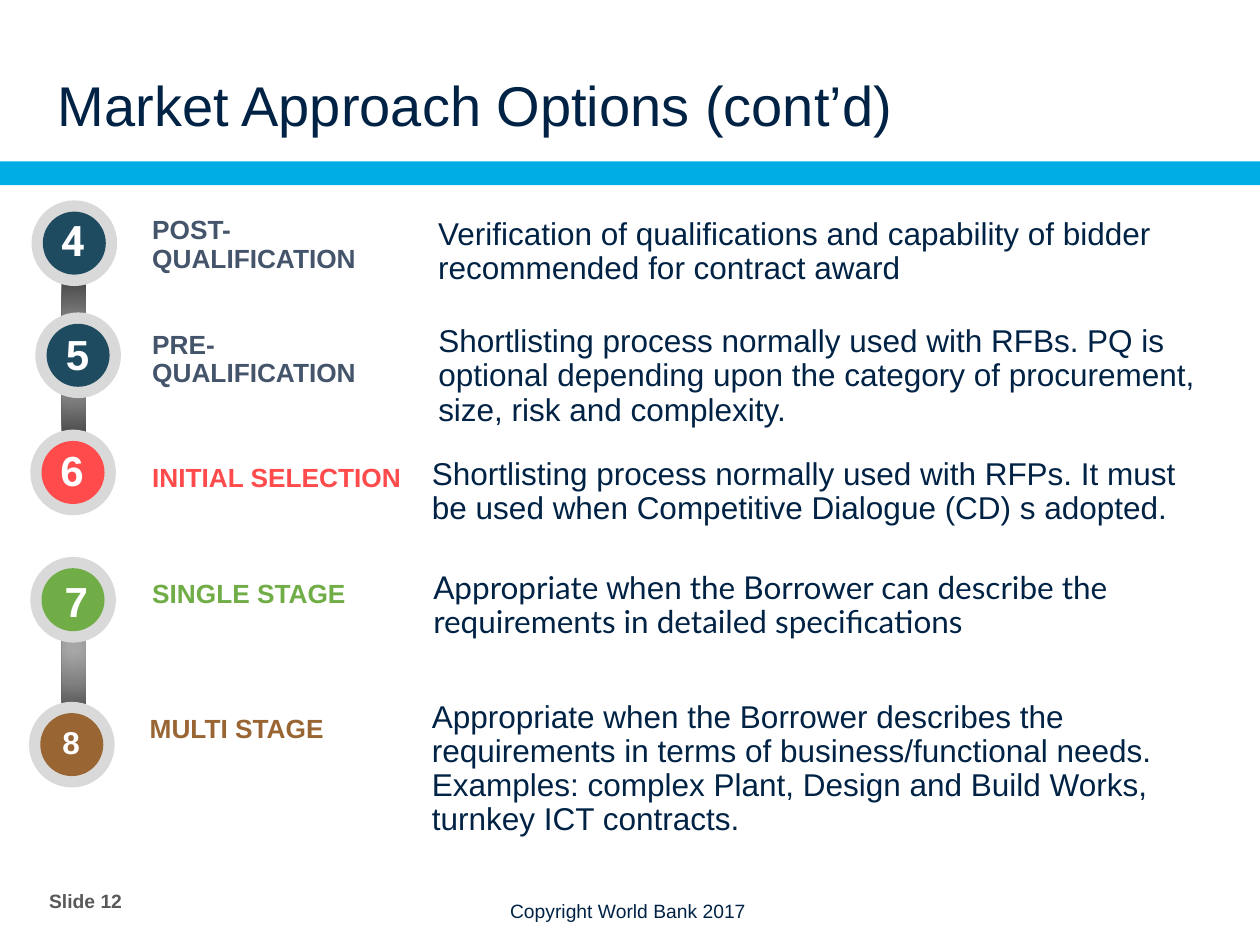
from dataclasses import dataclass

from pptx import Presentation
from pptx.dml.color import RGBColor
from pptx.enum.shapes import MSO_SHAPE as Shape
from pptx.enum.text import MSO_ANCHOR as Anchor, MSO_AUTO_SIZE as AutoSize, PP_ALIGN as Align
from pptx.oxml import parse_xml
from pptx.oxml.ns import nsdecls
from pptx.util import Inches, Pt


@dataclass(frozen=True)
class Theme:
    navy: str = "002345"
    band: str = "00ADE4"
    gray: str = "595959"
    ring: str = "D9D9D9"
    white: str = "FFFFFF"
    teal: str = "1F4B60"
    slate: str = "44546A"
    red: str = "FF4B4B"
    green: str = "70AD47"
    brown: str = "996633"
    bar_stops: tuple = ((7, "A6A6A6"), (48, "808080"), (100, "404040"))
    font: str = "Arial"
    title: int = 32
    number: int = 24
    body: int = 18
    label: int = 15
    footer: int = 11


THEME = Theme()


@dataclass
class Option:
    number: str
    badge: tuple
    number_box: tuple
    disc_color: str
    label: str
    label_box: tuple
    label_color: str
    description: tuple
    description_box: tuple
    number_size: int = THEME.number
    number_font: str = THEME.font


OPTIONS = [
    Option("4", (0.25, 1.59), (0.38, 1.7, 0.4, 0.46), THEME.teal,
           "POST-QUALIFICATION", (1.11, 1.67, 2.27, 0.56), THEME.slate,
           (("Verification of qualifications and capability of bidder "
             "recommended for contract award", THEME.font),),
           (3.38, 1.68, 6.27, 0.65), number_font="Roboto"),
    Option("5", (0.28, 2.48), (0.39, 2.6, 0.45, 0.46), THEME.teal,
           "PRE-QUALIFICATION", (1.11, 2.58, 2.27, 0.56), THEME.slate,
           (("Shortlisting process normally used with RFBs. PQ is optional depending "
             "upon the category of procurement, size, risk and complexity.", THEME.font),),
           (3.38, 2.53, 6.25, 0.92)),
    Option("6", (0.24, 3.41), (0.38, 3.52, 0.38, 0.46), THEME.red,
           "INITIAL SELECTION", (1.11, 3.64, 2.27, 0.33), THEME.red,
           (("Shortlisting process normally used with RFPs. It must be used when "
             "Competitive Dialogue (CD) s adopted.", THEME.font),),
           (3.33, 3.58, 6.19, 0.65)),
    Option("7", (0.24, 4.42), (0.39, 4.56, 0.43, 0.46), THEME.green,
           "SINGLE STAGE", (1.11, 4.56, 2.27, 0.33), THEME.green,
           (("Appropriate ", "Lato"), ("when", THEME.font),
            (" the Borrower can describe the requirements in detailed specifications", "Lato")),
           (3.34, 4.49, 6.48, 0.65)),
    Option("8", (0.23, 5.57), (0.26, 5.72, 0.61, 0.37), THEME.brown,
           "MULTI STAGE", (1.09, 5.63, 2.27, 0.33), THEME.brown,
           (("Appropriate when the Borrower describes the requirements in terms of "
             "business/functional needs. Examples: complex Plant, Design and Build Works, "
             "turnkey ICT contracts.", THEME.font),),
           (3.33, 5.51, 6.25, 1.19), number_size=THEME.body),
]


class SlideBuilder:
    def __init__(self, slide, theme):
        self.slide = slide
        self.theme = theme

    def shape(self, kind, box, color):
        shape = self.slide.shapes.add_shape(kind, *map(Inches, box))
        shape.shadow.inherit = False
        shape.line.fill.background()
        shape.fill.solid()
        shape.fill.fore_color.rgb = RGBColor.from_string(color)
        return shape

    def bar(self, box):
        """Draw a link between badges, shaded radially from its centre."""
        stops = self.theme.bar_stops
        bar = self.shape(Shape.RECTANGLE, box, stops[0][1])
        stop_xml = "".join(
            f'<a:gs pos="{percent * 1000}"><a:srgbClr val="{color}"/></a:gs>'
            for percent, color in stops)
        gradient = parse_xml(
            f'<a:gradFill {nsdecls("a")} rotWithShape="1"><a:gsLst>{stop_xml}</a:gsLst>'
            '<a:path path="circle"><a:fillToRect l="50000" t="50000" r="50000" b="50000"/>'
            '</a:path></a:gradFill>')
        properties = bar._element.spPr
        properties.replace(properties.find(gradient.tag.replace("gradFill", "solidFill")), gradient)

    def badge(self, left, top, color):
        ring, disc = 0.68, 0.5
        inset = (ring - disc) / 2
        self.shape(Shape.OVAL, (left, top, ring, ring), self.theme.ring)
        self.shape(Shape.OVAL, (left + inset, top + inset, disc, disc), color)

    def text(self, box, runs, size, color, bold=False, align=Align.LEFT, anchor=Anchor.MIDDLE,
             spacing=0.9, wrap=True, grow=True, padded=True):
        """Add one paragraph made of (text, font name) runs."""
        frame = self.slide.shapes.add_textbox(*map(Inches, box)).text_frame
        frame.word_wrap = wrap
        frame.auto_size = AutoSize.SHAPE_TO_FIT_TEXT if grow else AutoSize.NONE
        frame.vertical_anchor = anchor
        if not padded:
            frame.margin_left = frame.margin_top = frame.margin_right = frame.margin_bottom = 0
        paragraph = frame.paragraphs[0]
        paragraph.alignment = align
        paragraph.line_spacing = spacing
        for words, font_name in runs:
            run = paragraph.add_run()
            run.text = words
            run.font.name = font_name
            run.font.size = Pt(size)
            run.font.bold = bold
            run.font.color.rgb = RGBColor.from_string(color)

    def option(self, option):
        theme = self.theme
        self.badge(*option.badge, option.disc_color)
        self.text(option.number_box, [(option.number, option.number_font)], option.number_size,
                  theme.white, bold=True, align=Align.CENTER)
        self.text(option.label_box, [(option.label, theme.font)], theme.label,
                  option.label_color, bold=True)
        self.text(option.description_box, option.description, theme.body, theme.navy)


def main():
    presentation = Presentation()
    presentation.slide_width, presentation.slide_height = Inches(10), Inches(7.5)
    slide = presentation.slides.add_slide(presentation.slide_layouts[6])
    builder = SlideBuilder(slide, THEME)

    builder.text((3.95, 7.09, 2.13, 0.29), [("Copyright World Bank 2017", THEME.font)],
                 THEME.footer, THEME.navy, anchor=Anchor.TOP, spacing=1.0, wrap=False)
    builder.shape(Shape.RECTANGLE, (0, 1.28, 10, 0.19), THEME.band)
    builder.text((0.39, 6.95, 0.69, 0.4), [("Slide 12", THEME.font)], THEME.footer, THEME.gray,
                 bold=True, spacing=1.0, grow=False, padded=False)
    builder.text((0.46, 0.26, 9.25, 0.83), [("Market Approach Options (cont’d)", THEME.font)],
                 THEME.title, THEME.navy, anchor=Anchor.BOTTOM, spacing=1.0, grow=False,
                 padded=False)

    for top, height in ((2.19, 1.31), (4.56, 1.16)):
        builder.bar((0.49, top, 0.19, height))
    for option in OPTIONS:
        builder.option(option)

    presentation.save("out.pptx")


if __name__ == "__main__":
    main()
